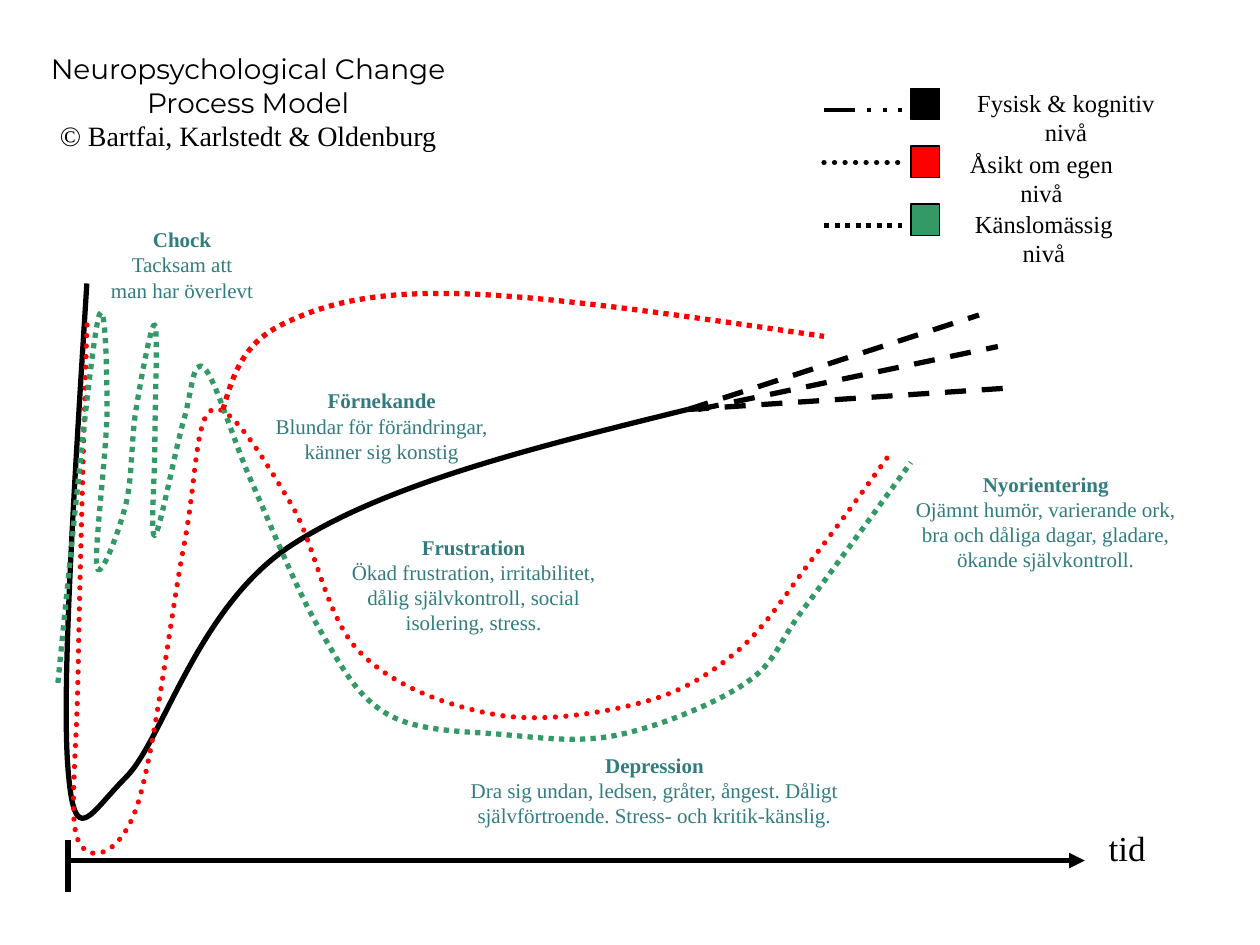
from lxml import etree
from pptx import Presentation
from pptx.dml.color import RGBColor
from pptx.enum.dml import MSO_LINE
from pptx.enum.shapes import MSO_CONNECTOR, MSO_SHAPE
from pptx.enum.text import MSO_ANCHOR, PP_ALIGN
from pptx.oxml.ns import qn
from pptx.util import Pt

PX = 9144  # 100 px to the inch
DASH, DOT, DASH_DOT = MSO_LINE.DASH, MSO_LINE.ROUND_DOT, MSO_LINE.DASH_DOT_DOT
STRAIGHT, RECT = MSO_CONNECTOR.STRAIGHT, MSO_SHAPE.RECTANGLE
CENTER, TOP = PP_ALIGN.CENTER, MSO_ANCHOR.TOP
SERIF, SANS = "Times New Roman", "Montserrat"
BLACK, RED, GREEN, TEAL = "000000", "FF0000", "339966", "327C7F"

TITLE = ["Neuropsychological Change Process Model", "© Bartfai, Karlstedt & Oldenburg"]

# Points each curve passes through, then its line format
CURVES = [
    ([(69, 225), (54, 610), (100, 617), (231, 433), (546, 325)], dict(color=BLACK)),
    ([(69, 258), (62, 533), (62, 667), (108, 642), (146, 433), (169, 325), (231, 400),
      (285, 517), (392, 567), (508, 558), (585, 517), (646, 442), (708, 358)],
     dict(color=RED, dash=DOT, rounded=True)),
    ([(46, 542), (77, 258), (85, 325), (77, 450), (100, 400), (108, 325), (123, 258),
      (123, 350), (123, 425), (146, 333), (162, 292), (200, 383), (254, 500), (308, 567),
      (400, 583), (492, 583), (592, 542), (638, 483), (723, 367)],
     dict(color=GREEN, dash=DOT)),
    ([(177, 325), (223, 258), (362, 233), (654, 267)], dict(color=RED, dash=DOT)),
]

LINES = [
    ((54, 683), (861, 683), dict(arrow=True)),
    ((54, 667), (54, 708), {}),
    ((546, 325), (777, 250), dict(dash=DASH)),
    ((554, 325), (792, 275), dict(dash=DASH)),
    ((546, 325), (800, 308), dict(dash=DASH)),
]

# Box, wrapping, heading, body lines
PHASES = [
    ((77, 175, 135, 71), False, "Chock", ["Tacksam att", "man har överlevt"]),
    ((715, 369, 230, 91), False, "Nyorientering",
     ["Ojämnt humör, varierande ork,", "bra och dåliga dagar, gladare,",
      "ökande självkontroll."]),
    ((208, 303, 190, 71), False, "Förnekande",
     ["Blundar för förändringar,", "känner sig konstig"]),
    ((331, 592, 377, 74), True, "Depression",
     ["Dra sig undan, ledsen, gråter, ångest. Dåligt självförtroende. "
      "Stress- och kritik-känslig."]),
    ((268, 419, 216, 91), False, "Frustration",
     ["Ökad frustration, irritabilitet,", "dålig självkontroll, social",
      "isolering, stress."]),
]

# Label, label left and width, swatch colour, key line height and format
LEGEND = [
    ("Fysisk & kognitiv nivå", 754, 184, BLACK, 87, dict(dash=DASH_DOT, width=2.25)),
    ("Åsikt om egen nivå", 747, 159, RED, 129, dict(dash=DOT, rounded=True)),
    ("Känslomässig nivå", 751, 155, GREEN, 179, dict(dash=DOT)),
]
LEGEND_TOP, LABEL_TOP, LABEL_STEP, SWATCH_STEP = 70, 65, 48, 46


def rgb(color):
    return RGBColor.from_string(color)


def emu(*lengths):
    return [round(n * PX) for n in lengths]


def style_line(s, color=BLACK, width=3, dash=None, rounded=False, arrow=False):
    s.line.color.rgb = rgb(color)
    s.line.width = Pt(width)
    if dash is not None:
        s.line.dash_style = dash
    ln = s._element.spPr.find(qn("a:ln"))
    if rounded:
        ln.set("cap", "rnd")
    if arrow:
        etree.SubElement(ln, qn("a:tailEnd"), type="triangle")


def add_line(slide, start, end, **fmt):
    s = slide.shapes.add_connector(STRAIGHT, *emu(*start, *end))
    style_line(s, **fmt)
    etree.SubElement(s._element.spPr, qn("a:effectLst"))


def bezier_points(knots):
    """Control and end points of a smooth cubic spline through the knots."""
    def middle(a, b):
        return tuple((m + n) / 2 for m, n in zip(a, b))

    slopes = [tuple((n - m) / 6 for m, n in zip(a, b)) for a, b in zip(knots, knots[2:])]
    after = [tuple(k + d for k, d in zip(*pair)) for pair in zip(knots[1:], slopes)]
    before = [tuple(k - d for k, d in zip(*pair)) for pair in zip(knots[1:], slopes)]
    after.insert(0, middle(knots[0], before[0]))
    before.append(middle(after[-1], knots[-1]))
    return [p for segment in zip(after, before, knots[1:]) for p in segment]


def add_curve(slide, knots, **fmt):
    builder = slide.shapes.build_freeform(*emu(*knots[0]), scale=1.0)
    builder.add_line_segments([emu(*p) for p in bezier_points(knots)], close=False)
    s = builder.convert_to_shape()
    s.shadow.inherit = False
    s.fill.background()
    style_line(s, **fmt)
    # Join each three straight steps into one cubic step
    steps = list(s._element.iter(qn("a:lnTo")))
    for i in range(0, len(steps), 3):
        cubic = etree.Element(qn("a:cubicBezTo"))
        steps[i].addprevious(cubic)
        for step in steps[i:i + 3]:
            cubic.append(step[0])
            step.getparent().remove(step)


def write(s, paragraphs, size=12, color=BLACK, fonts=(SERIF,), heading=False, wrap=True):
    """Fill a shape with centred paragraphs; the last font serves all that remain."""
    tf = s.text_frame
    tf.word_wrap = wrap
    tf.vertical_anchor = TOP
    for i, text in enumerate(paragraphs):
        p = tf.paragraphs[0] if i == 0 else tf.add_paragraph()
        p.alignment = CENTER
        r = p.add_run()
        r.text = text
        r.font.size = Pt(size)
        r.font.name = fonts[min(i, len(fonts) - 1)]
        r.font.bold = heading and i == 0
        r.font.color.rgb = rgb(color)


def add_text(slide, box, paragraphs, **fmt):
    write(slide.shapes.add_textbox(*emu(*box)), paragraphs, **fmt)


def add_legend(slide):
    for i, (label, left, width, color, y, fmt) in enumerate(LEGEND):
        s = slide.shapes.add_shape(RECT, *emu(723, LEGEND_TOP + i * SWATCH_STEP, 23, 25))
        s.shadow.inherit = False
        s.fill.solid()
        s.fill.fore_color.rgb = rgb(color)
        style_line(s, width=0.75)
        add_text(slide, (left, LABEL_TOP + i * LABEL_STEP, width, 33), [label], size=14)
        add_line(slide, (654, y), (716, y), **fmt)


def main():
    prs = Presentation()
    prs.slide_width, prs.slide_height = emu(1000, 750)
    slide = prs.slides.add_slide(prs.slide_layouts[5])
    title = slide.shapes.title
    title.left, title.top, title.width, title.height = emu(28, 36, 338, 91)
    write(title, TITLE, size=16, fonts=(SANS, SERIF))
    for start, end, fmt in LINES:
        add_line(slide, start, end, **fmt)
    for knots, fmt in CURVES:
        add_curve(slide, knots, **fmt)
    for box, wrap, heading, body in PHASES:
        add_text(slide, box, [heading, *body], color=TEAL, heading=True, wrap=wrap)
    add_legend(slide)
    add_text(slide, (869, 651, 51, 50), ["tid"], size=20, wrap=False)
    prs.save("out.pptx")


if __name__ == "__main__":
    main()
